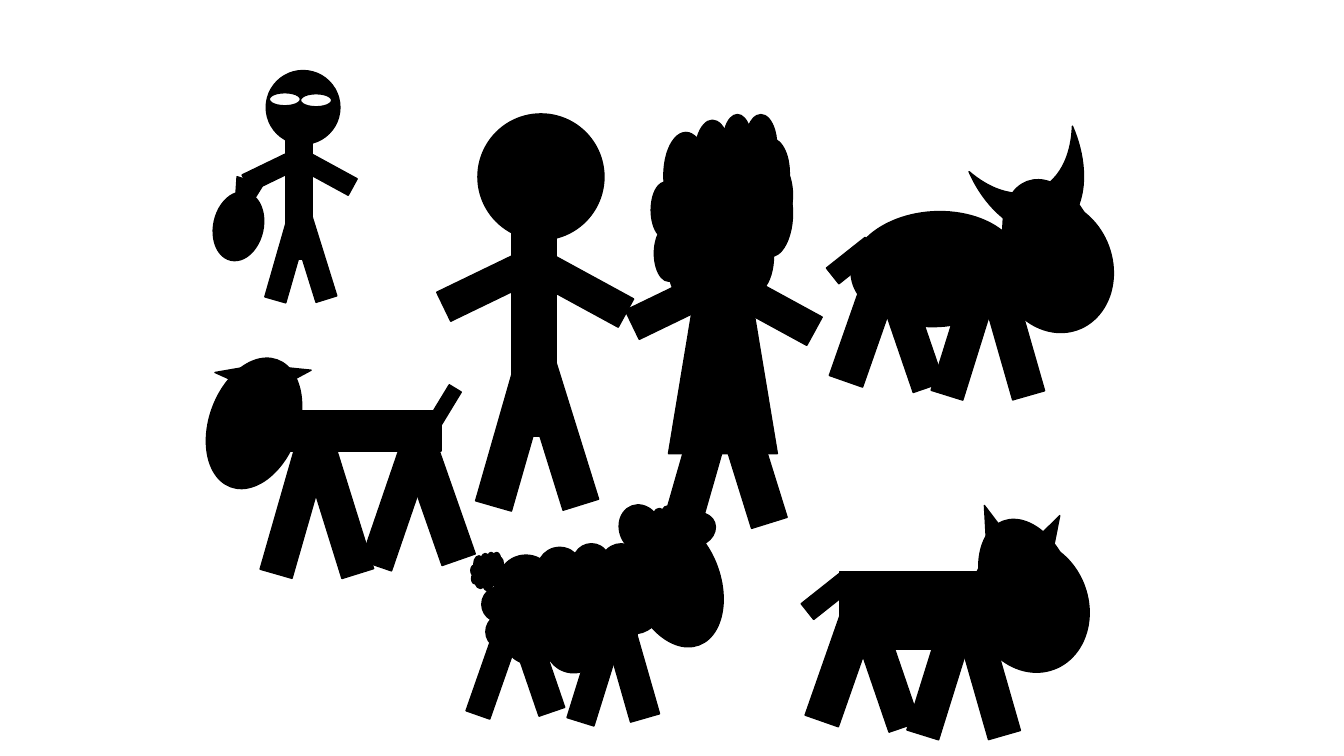
from pptx import Presentation
from pptx.dml.color import RGBColor
from pptx.enum import shapes
from pptx.util import Inches, Pt

COLORS = {"ink": "000000", "eye": "FFFFFF"}
CELL = Inches(1)  # the slide is a grid of 13.33 columns by 7.5 rows
COLS, ROWS = 13.33, 7.5

KINDS = {
    "oval": shapes.MSO_SHAPE.OVAL,
    "eye": shapes.MSO_SHAPE.OVAL,
    "bar": shapes.MSO_SHAPE.RECTANGLE,
    "ear": shapes.MSO_SHAPE.ISOSCELES_TRIANGLE,
    "dress": shapes.MSO_SHAPE.TRAPEZOID,
    "knot": shapes.MSO_SHAPE.TRAPEZOID,
    "fluff": shapes.MSO_SHAPE.CLOUD,
    "horns": shapes.MSO_SHAPE.MOON,
}

# Parts: kind, column, row, width, height, rotation; measured from the figure's origin
HEAD = [("oval", 0, 0, 1.25, 1.25, 0)]
TRUNK = [("bar", 0.33, 0.5, 0.45, 2.7, 0)]
LIMBS = [
    ("bar", 0.62, 2.46, 0.37, 1.45, 162.7),
    ("bar", 0.19, 2.32, 0.37, 1.6, 196),
    ("bar", 0.83, 1.17, 0.32, 1.09, 298.6),
    ("bar", -0.09, 1.26, 0.32, 0.91, 244.2),
]
MAN = HEAD + TRUNK + LIMBS
WOMAN = HEAD + LIMBS + [
    ("dress", 0.02, 1.19, 1.08, 2, 0),
    ("fluff", -0.15, -0.18, 1.4, 2.02, 0),
]
LOOT_AND_EYES = [
    ("oval", -0.62, 1.3, 0.69, 0.49, 102.8),
    ("knot", -0.32, 1.09, 0.27, 0.16, 197.8),
    ("eye", 0.03, 0.22, 0.31, 0.13, 0),
    ("eye", 0.34, 0.23, 0.31, 0.13, 0),
]

# Animals face right; the dog is mirrored
MUZZLE = [("oval", 1.51, 0.36, 1.34, 0.88, 69.9)]
FACE = [("oval", 1.55, 0.44, 1.34, 1.14, 69.9)]
LEGS = [
    ("bar", 0.58, 0.84, 0.32, 1.41, 161.1),
    ("bar", 0.19, 0.89, 0.35, 1.3, 19.3),
    ("bar", 1.6, 0.89, 0.33, 1.43, 164),
    ("bar", 1.18, 1.02, 0.33, 1.3, 197.3),
]
DOG = MUZZLE + LEGS + [
    ("bar", 1.14, -0.14, 0.4, 2.03, 90),
    ("bar", 0.27, 0.41, 0.14, 0.6, 328.7),
    ("ear", 2.25, 0.09, 0.23, 0.34, 65.8),
    ("ear", 1.68, 0.2, 0.23, 0.34, 264.2),
]
CAT = MUZZLE + LEGS + FACE + [
    ("bar", 0.96, 0.04, 0.77, 2.03, 90),
    ("bar", 0.1, 0.67, 0.2, 0.49, 231.6),
    ("ear", 2.25, 0.09, 0.23, 0.34, 11.1),
    ("ear", 1.66, 0.05, 0.23, 0.34, 322.8),
]
BULL = MUZZLE + LEGS + FACE + [
    ("horns", 1.62, -0.31, 0.88, 1.12, 246.3),
    ("bar", 0.11, 0.71, 0.2, 0.49, 231.6),
    ("oval", 0.2, 0.47, 1.69, 1.14, 356.9),
]
SHEEP = MUZZLE + [
    ("bar", 0.59, 0.72, 0.27, 1.41, 161.1),
    ("bar", 0.31, 0.86, 0.25, 1.3, 19.3),
    ("bar", 1.53, 0.75, 0.3, 1.43, 164),
    ("bar", 1.29, 0.92, 0.28, 1.3, 197.3),
    ("fluff", 0.26, 0.42, 1.78, 1.28, 0),
    ("fluff", 0.15, 0.51, 0.33, 0.38, 0),
    ("fluff", 1.92, 0.04, 0.41, 0.38, 0),
    ("oval", 1.59, 0.07, 0.48, 0.41, 69.9),
    ("oval", 2.21, 0.08, 0.33, 0.41, 69.9),
]


def add_part(group, kind, col, row, width, height, rotation):
    """Add one silhouette part to a figure."""
    box = [round(v * CELL) for v in (col, row, width, height)]
    sp = group.shapes.add_shape(KINDS[kind], *box)
    sp.rotation = rotation
    sp.shadow.inherit = False
    sp.fill.solid()
    fill = COLORS["eye" if kind == "eye" else "ink"]
    sp.fill.fore_color.rgb = RGBColor.from_string(fill)
    sp.line.color.rgb = RGBColor.from_string(COLORS["ink"])
    sp.line.width = Pt(1)
    return sp


def add_figure(group, parts, col, row, scale=1, mirror=False):
    """Place a list of parts at an origin, scaled or mirrored."""
    for kind, x, y, width, height, rotation in parts:
        if mirror:
            x, rotation = -x - width, -rotation % 360
        sp = add_part(group, kind, col + x * scale, row + y * scale,
                      width * scale, height * scale, rotation)
        if kind == "ear":
            sp.adjustments[0] = 0 if mirror else 1
        elif kind == "dress":
            sp.adjustments[0] = 0.307


def main():
    prs = Presentation()
    prs.slide_width, prs.slide_height = round(COLS * CELL), round(ROWS * CELL)
    slide = prs.slides.add_slide(prs.slide_layouts[6])
    new_group = slide.shapes.add_group_shape

    # Couple and animals
    add_figure(new_group(), MAN, 4.74, 1.13)
    add_figure(new_group(), DOG, 4.7, 3.4, mirror=True)
    add_figure(new_group(), WOMAN, 6.61, 1.31)
    add_figure(new_group(), CAT, 8, 5)
    add_figure(new_group(), SHEEP, 4.52, 4.97)
    add_figure(new_group(), BULL, 8.24, 1.63)

    # Thief: a small man with a bag and a pair of eyes
    thief = new_group()
    add_figure(thief, MAN, 2.64, 0.7, scale=0.585)
    add_figure(thief, LOOT_AND_EYES, 2.64, 0.7)

    prs.save("out.pptx")


if __name__ == "__main__":
    main()
